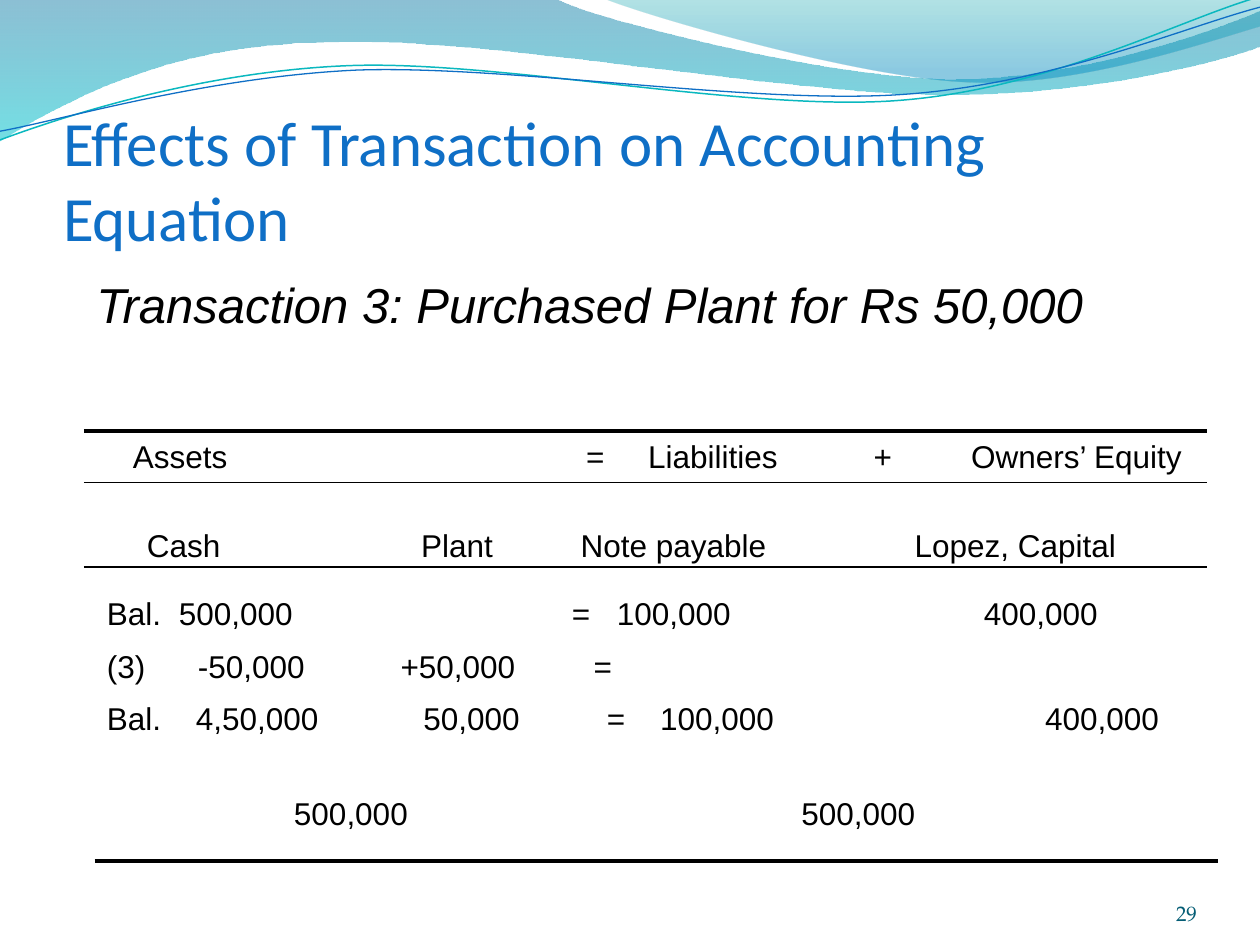
"""Build the slide on how a plant purchase changes the accounting equation."""
from lxml import etree
from pptx import Presentation
from pptx.dml.color import RGBColor
from pptx.enum.shapes import MSO_CONNECTOR
from pptx.enum.text import MSO_ANCHOR, MSO_AUTO_SIZE, PP_ALIGN
from pptx.oxml.ns import qn
from pptx.util import Pt

STRAIGHT = MSO_CONNECTOR.STRAIGHT
BOTTOM, TOP = MSO_ANCHOR.BOTTOM, MSO_ANCHOR.TOP
LEFT, RIGHT = PP_ALIGN.LEFT, PP_ALIGN.RIGHT
NO_AUTOFIT = MSO_AUTO_SIZE.NONE

COLORS = {
    "text": "000000", "title": "0F6FC6", "number": "045D75",
    "deep": "0074A1", "aqua": "00C6CF", "teal": "00A1A9", "sky": "008BBF",
    "curve": "0AB8BF",
}
INSET, ROW_HEIGHT, CURVE_TILT = 7.2, 29, 357.3

TITLE = "Effects of Transaction on Accounting Equation"
SUBTITLE = "Transaction 3: Purchased Plant for Rs 50,000"
PAGE_NUMBER = "29"

# left, top, width, entries with the x at which each starts
ROWS = [
    (60, 246.2, 624, [("Assets", 76), ("=", 334.9), ("Liabilities", 370.3),
                      ("+", 499.2), ("Owners’ Equity", 554.9)]),
    (77, 296.9, 569, [("Cash", 84), ("Plant", 240.6), ("Note payable", 331.8),
                      ("Lopez, Capital", 522.7)]),
    (54, 336, 624, [("Bal.", 61.2), ("500,000", 102.3), ("=", 326.9),
                    ("100,000", 352.6), ("400,000", 562.3)]),
    (54, 366, 304, [("(3)", 61.2), ("-50,000", 113.2), ("+50,000", 229),
                    ("=", 339.4)]),
    (54, 396, 622, [("Bal.", 61.2), ("4,50,000", 112), ("50,000", 242),
                    ("=", 346.9), ("100,000", 377.3), ("400,000", 597.3)]),
    (156, 450, 375, [("500,000", 168), ("500,000", 457.9)]),
]
RULES = [(48, 246.2, 2.25), (48, 275.8, 0.75), (48, 324, 0.75), (54, 492, 2.25)]
RULE_LENGTH = 642

# start point, then lines (2 numbers) and cubic curves (6 numbers)
WAVES = [
    ((0, -1), [(317, -1), (343, 12, 478, 45, 546, 45), (614, 45, 690, 19, 720, 6),
               (721, 26), (708, 32, 626, 55, 537, 54), (447, 54, 275, 20, 185, 24),
               (93, 25, 33, 60, -1, 81)],
     [(0, "deep", 45), (1, "aqua", 55)]),
    ((345, -1), [(366, 8, 491, 45, 554, 47), (616, 50, 692, 23, 720, 15), (720, 0)],
     [(0, "teal", 30), (0.8, "sky", 45)]),
]
CURVES = [
    ((-1.4, 63), [(34, 51.7, 114, 29.4, 199, 30), (284, 30.5, 426, 67.2, 512, 64.7),
                  (599.3, 62.3, 676, 25.9, 720.1, 15.5)], "curve", 0.85),
    ((-1.1, 58), [(33, 53.6, 118, 32.6, 204, 32.7), (290.3, 33.7, 429, 63.3, 515.3, 61.3),
                  (601.5, 59.4, 679, 30, 721.4, 21.1)], "title", 0.75),
]


def rgb(name):
    """Return a named colour."""
    return RGBColor.from_string(COLORS[name])


def add_outline(slide, start, segments, close):
    """Add a freeform whose six-number segments are cubic curves."""
    points = [(Pt(x), Pt(y)) for segment in segments
              for x, y in zip(segment[::2], segment[1::2])]
    builder = slide.shapes.build_freeform(*map(Pt, start))
    builder.add_line_segments(points, close=close)
    shape = builder.convert_to_shape()
    shape.shadow.inherit = False
    lines = iter(list(shape._element.iter(qn("a:lnTo"))))
    for segment in segments:
        line = next(lines)
        if len(segment) == 6:
            line.tag = qn("a:cubicBezTo")
            for other in (next(lines), next(lines)):
                line.append(other[0])
                other.getparent().remove(other)
    return shape


def add_wave(slide, start, segments, stops):
    """Add a translucent wave with a downward gradient."""
    wave = add_outline(slide, start, segments, True)
    wave.line.fill.background()
    wave.fill.gradient()
    wave.fill.gradient_angle = 270
    for stop, (position, color, _) in zip(wave.fill.gradient_stops, stops):
        stop.position = position
        stop.color.rgb = rgb(color)
    for node, (_, _, opacity) in zip(wave._element.spPr.iter(qn("a:srgbClr")), stops):
        etree.SubElement(node, qn("a:alpha"), val=str(opacity * 1000))


def add_curve(slide, start, segments, color, width):
    """Add a thin tilted curve."""
    curve = add_outline(slide, start, segments, False)
    curve.rotation = CURVE_TILT
    curve.fill.background()
    curve.line.color.rgb = rgb(color)
    curve.line.width = Pt(width)


def place(box, left, top, width, height):
    """Set the position and size of a box."""
    box.left, box.top, box.width, box.height = map(Pt, (left, top, width, height))


def write(box, text, size, font, color, insets, anchor=TOP, align=LEFT, italic=False):
    """Write one formatted paragraph and return it."""
    frame = box.text_frame
    frame.text = text
    frame.word_wrap = True
    frame.auto_size = NO_AUTOFIT
    frame.vertical_anchor = anchor
    (frame.margin_left, frame.margin_top,
     frame.margin_right, frame.margin_bottom) = map(Pt, insets)
    para = frame.paragraphs[0]
    para.alignment = align
    for span in para.runs:
        span.font.size, span.font.name, span.font.italic = Pt(size), font, italic
        span.font.color.rgb = rgb(color)
    return para


def add_text(slide, frame, *style, **options):
    """Add a text box and return its paragraph."""
    box = slide.shapes.add_textbox(0, 0, 0, 0)
    place(box, *frame)
    return write(box, *style, **options)


def add_row(slide, left, top, width, entries):
    """Add a row whose entries sit at tab stops."""
    first = entries[0][1]
    para = add_text(slide, (left, top, width, ROW_HEIGHT),
                    "\t".join(text for text, _ in entries), 18, "Arial", "text",
                    (first - left, 3.6, 0, 3.6))
    tabs = etree.SubElement(para._p.get_or_add_pPr(), qn("a:tabLst"))
    for _, x in entries[1:]:
        etree.SubElement(tabs, qn("a:tab"), pos=str(Pt(x - first)), algn="l")


def add_rule(slide, left, y, width):
    """Add a horizontal rule."""
    rule = slide.shapes.add_connector(STRAIGHT, Pt(left), Pt(y),
                                      Pt(left + RULE_LENGTH), Pt(y))
    rule.line.color.rgb = rgb("text")
    rule.line.width = Pt(width)
    etree.SubElement(rule._element.spPr, qn("a:effectLst"))


def main():
    """Build and save the deck."""
    deck = Presentation()
    deck.slide_width, deck.slide_height = Pt(720), Pt(540)
    slide = deck.slides.add_slide(deck.slide_layouts[5])
    for wave in WAVES:
        add_wave(slide, *wave)
    for curve in CURVES:
        add_curve(slide, *curve)
    title = slide.shapes.title
    place(title, 36, 55.4, 654, 90)
    write(title, TITLE, 36, "Calibri", "title", (0, 3.6, 0, 0), anchor=BOTTOM)
    slide.shapes._spTree.append(title._element)
    add_text(slide, (624, 500.4, 60, 28.8), PAGE_NUMBER, 12, "TeX Gyre Pagella",
             "number", (0, 0, 0, 0), anchor=BOTTOM, align=RIGHT)
    add_text(slide, (48, 153.4, 636, 41), SUBTITLE, 28, "Arial", "text",
             (INSET, 3.6, INSET, 3.6), italic=True)
    for row in ROWS:
        add_row(slide, *row)
    for rule in RULES:
        add_rule(slide, *rule)
    deck.save("out.pptx")


if __name__ == "__main__":
    main()
